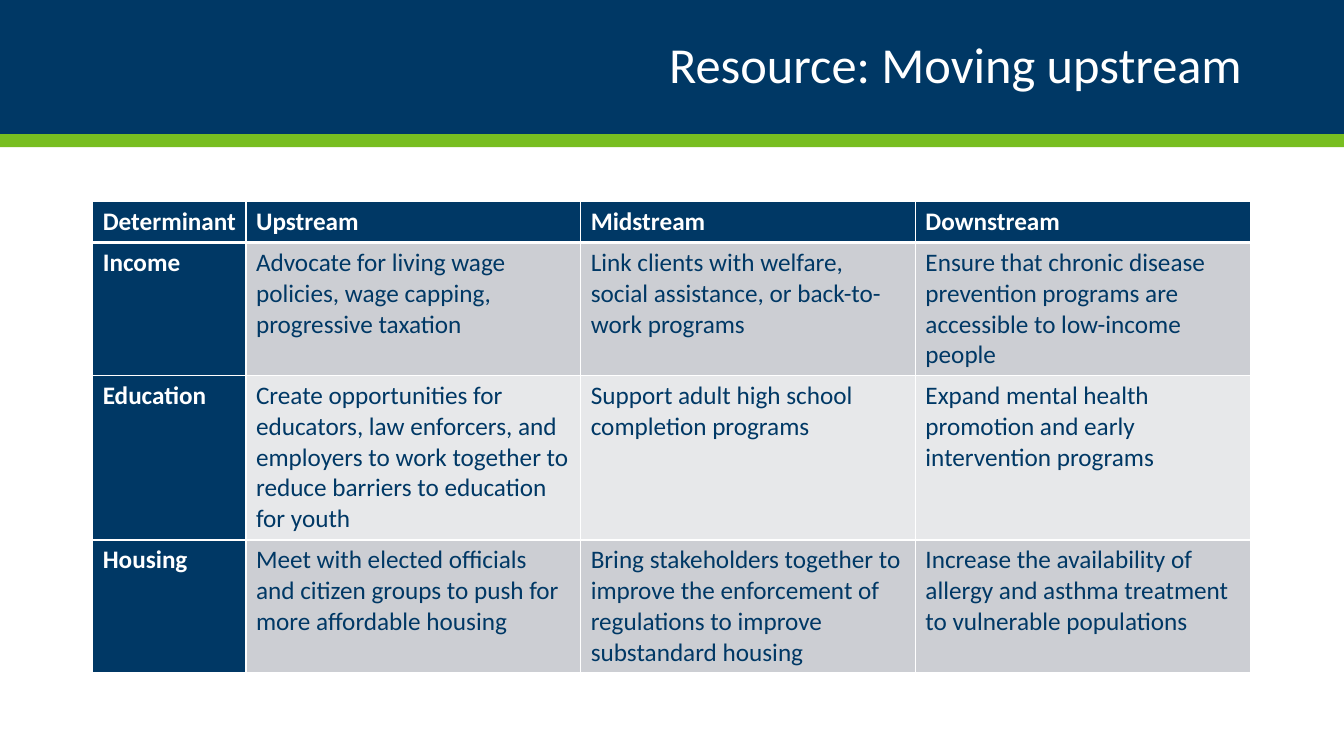
from dataclasses import dataclass

from lxml.etree import SubElement
from pptx import Presentation
from pptx.dml.color import RGBColor
from pptx.enum.shapes import MSO_SHAPE
from pptx.enum.text import MSO_ANCHOR, MSO_AUTO_SIZE, PP_ALIGN
from pptx.oxml.ns import qn
from pptx.util import Inches, Pt

TITLE = "Resource: Moving upstream"
HEADINGS = ("Determinant", "Upstream", "Midstream", "Downstream")
DETERMINANTS = (
    (
        "Income",
        "Advocate for living wage policies, wage capping, progressive taxation",
        "Link clients with welfare, social assistance, or back-to-work programs",
        "Ensure that chronic disease prevention programs are accessible to low-income people",
    ),
    (
        "Education",
        "Create opportunities for educators, law enforcers, and employers to work together "
        "to reduce barriers to education for youth",
        "Support adult high school completion programs",
        "Expand mental health promotion and early intervention programs",
    ),
    (
        "Housing",
        "Meet with elected officials and citizen groups to push for more affordable housing",
        "Bring stakeholders together to improve the enforcement of regulations "
        "to improve substandard housing",
        "Increase the availability of allergy and asthma treatment to vulnerable populations",
    ),
)


@dataclass(frozen=True)
class Theme:
    navy: str = "003865"
    green: str = "78BE21"
    white: str = "FFFFFF"
    stripes: tuple = ("CCCED3", "E7E8EA")
    font: str = "Calibri"
    title_size: int = 36
    table_size: int = 18
    thin_border: int = 1
    heading_border: int = 3


THEME = Theme()
SLIDE_WIDTH, SLIDE_HEIGHT = 13.33, 7.5
BANDS = ((0, 1.33, THEME.navy), (1.33, 0.13, THEME.green))
LEFT, CONTENT_WIDTH = 0.92, 11.5
TABLE_TOP = 2
COLUMN_WIDTHS = (1.52, 3.32, 3.32, 3.32)
ROW_HEIGHTS = (0.4, 1.31, 1.63, 1.31)
LABEL_RIGHT_MARGIN = 0.05


def add_band(slide, top, height, color):
    """Add a full-width band of one colour."""
    band = slide.shapes.add_shape(
        MSO_SHAPE.RECTANGLE, 0, Inches(top), Inches(SLIDE_WIDTH), Inches(height)
    )
    band.shadow.inherit = False
    band.fill.solid()
    band.fill.fore_color.rgb = RGBColor.from_string(color)
    band.line.fill.background()


def style_font(paragraph, size, color, bold=False):
    """Format every run of a paragraph."""
    for run in paragraph.runs:
        run.font.name = THEME.font
        run.font.size = Pt(size)
        run.font.bold = bold
        run.font.color.rgb = RGBColor.from_string(color)


def place_title(slide):
    """Set the title at the right, in front of the bands."""
    title = slide.shapes.title
    title.left, title.top = Inches(LEFT), Inches(0.17)
    title.width, title.height = Inches(CONTENT_WIDTH), Inches(1)
    frame = title.text_frame
    frame.text = TITLE
    frame.word_wrap = True
    frame.auto_size = MSO_AUTO_SIZE.NONE
    frame.vertical_anchor = MSO_ANCHOR.MIDDLE
    heading = frame.paragraphs[0]
    heading.alignment = PP_ALIGN.RIGHT
    heading.line_spacing = 0.9
    style_font(heading, THEME.title_size, THEME.white)
    title.element.getparent().append(title.element)


def add_borders(cell, top, bottom):
    """Draw white borders on the four sides of a cell."""
    properties = cell._tc.get_or_add_tcPr()
    widths = {"L": THEME.thin_border, "R": THEME.thin_border, "T": top, "B": bottom}
    for side, width in widths.items():
        border = SubElement(properties, qn(f"a:ln{side}"), w=str(Pt(width)))
        fill = SubElement(border, qn("a:solidFill"))
        SubElement(fill, qn("a:srgbClr"), val=THEME.white)


def add_determinants(slide):
    """Add the table of actions for each determinant."""
    rows = (HEADINGS, *DETERMINANTS)
    table = slide.shapes.add_table(
        len(rows), len(HEADINGS), Inches(LEFT), Inches(TABLE_TOP),
        Inches(sum(COLUMN_WIDTHS)), Inches(sum(ROW_HEIGHTS)),
    ).table
    table.first_col = True
    for column, width in zip(table.columns, COLUMN_WIDTHS):
        column.width = Inches(width)
    for row, height in zip(table.rows, ROW_HEIGHTS):
        row.height = Inches(height)
    for row_index, entries in enumerate(rows):
        top = THEME.heading_border if row_index == 1 else THEME.thin_border
        bottom = THEME.heading_border if row_index == 0 else THEME.thin_border
        for column_index, entry in enumerate(entries):
            is_label = row_index == 0 or column_index == 0
            stripe = THEME.stripes[(row_index - 1) % len(THEME.stripes)]
            cell = table.cell(row_index, column_index)
            add_borders(cell, top, bottom)
            cell.fill.solid()
            cell.fill.fore_color.rgb = RGBColor.from_string(THEME.navy if is_label else stripe)
            if is_label:
                cell.margin_right = Inches(LABEL_RIGHT_MARGIN)
            cell.text_frame.text = entry
            style_font(
                cell.text_frame.paragraphs[0], THEME.table_size,
                THEME.white if is_label else THEME.navy, is_label,
            )


def main():
    """Build and save the slide."""
    presentation = Presentation()
    presentation.slide_width = Inches(SLIDE_WIDTH)
    presentation.slide_height = Inches(SLIDE_HEIGHT)
    slide = presentation.slides.add_slide(presentation.slide_layouts[5])
    for band in BANDS:
        add_band(slide, *band)
    place_title(slide)
    add_determinants(slide)
    presentation.save("out.pptx")


if __name__ == "__main__":
    main()
